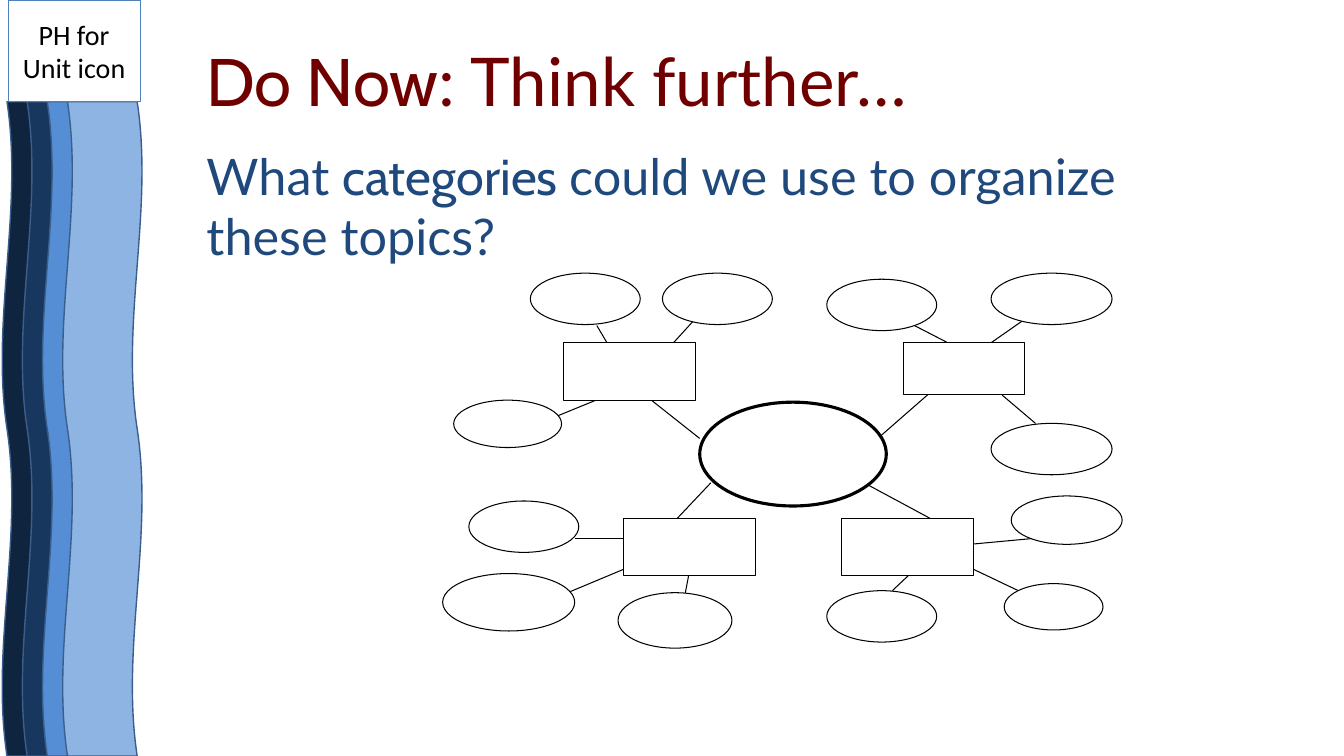
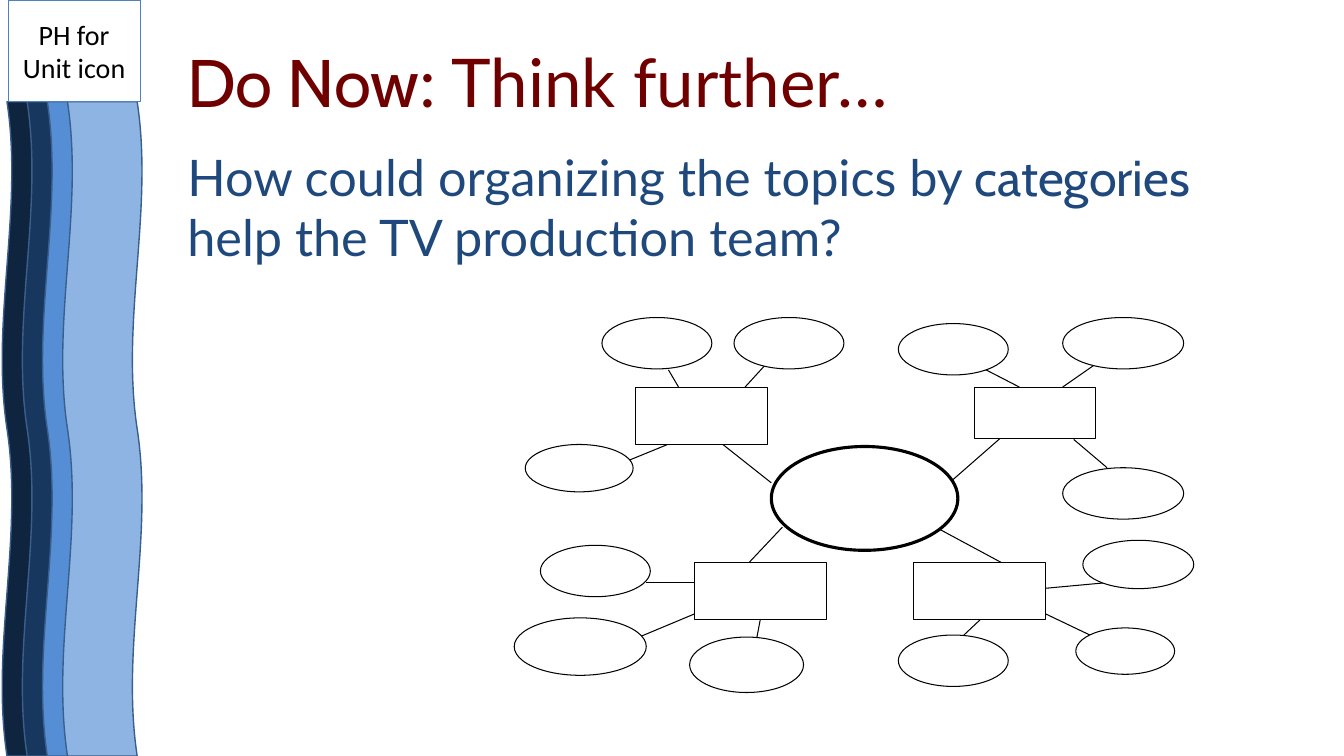
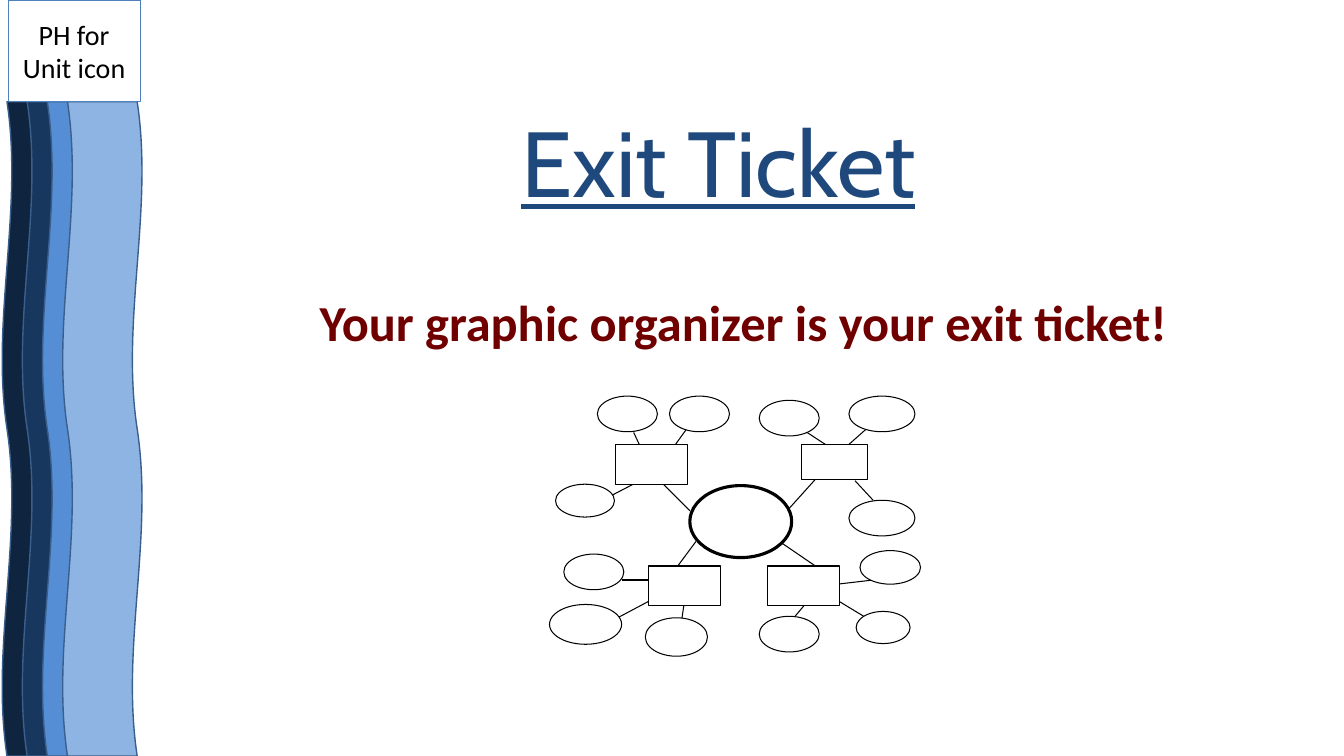
from pptx import Presentation
from pptx.dml.color import RGBColor
from pptx.enum.shapes import MSO_CONNECTOR, MSO_SHAPE
from pptx.enum.text import MSO_ANCHOR, MSO_AUTO_SIZE, PP_ALIGN
from pptx.oxml.ns import qn
from pptx.util import Inches, Pt
from lxml import etree

RECT, OVAL, WAVE = MSO_SHAPE.RECTANGLE, MSO_SHAPE.OVAL, MSO_SHAPE.DOUBLE_WAVE
STRAIGHT = MSO_CONNECTOR.STRAIGHT
MIDDLE = MSO_ANCHOR.MIDDLE
CENTER = PP_ALIGN.CENTER
GROW = MSO_AUTO_SIZE.SHAPE_TO_FIT_TEXT

HEADING, BODY, PLAIN = "Cabin", "Lato", "Calibri"
RED, NAVY, BLACK, WHITE = "700000", "1F497D", "000000", "FFFFFF"
WAVE_FILLS = ["0F243E", "17375E", "558ED5", "8EB4E3"]
WAVE_LINE, ICON_LINE = "3A5F8C", "4F81BD"

# Organizer map, in inches from its top left corner.
MAP_W, MAP_H = 6.74, 3.72
HUB = (2.55, 1.28, 1.85, 1.03)
# Each branch: box, line to the hub, then its topics as (oval, line)
BRANCHES = [
    ((1.2, 0.69, 1.31, 0.57), (2.07, 1.26, 2.55, 1.64), [
        ((0.87, 0, 1.09, 0.51), (1.63, 0.69, 1.53, 0.52)),
        ((2.18, 0, 1.09, 0.51), (2.29, 0.69, 2.5, 0.46)),
        ((0.11, 1.26, 1.07, 0.47), (1.57, 1.24, 1.13, 1.42))]),
    ((4.57, 0.69, 1.2, 0.51), (4.83, 1.19, 4.35, 1.61), [
        ((3.81, 0.06, 1.09, 0.51), (5.01, 0.69, 4.68, 0.52)),
        ((5.44, 0, 1.2, 0.51), (5.44, 0.69, 5.77, 0.46)),
        ((5.44, 1.49, 1.2, 0.51), (5.55, 1.21, 5.88, 1.49))]),
    ((1.79, 2.43, 1.31, 0.57), (2.33, 2.43, 2.66, 2.08), [
        ((0.26, 2.26, 1.09, 0.51), (1.85, 2.63, 1.31, 2.63)),
        ((0, 2.98, 1.31, 0.57), (1.79, 2.94, 1.24, 3.17)),
        ((1.74, 3.17, 1.13, 0.55), (2.44, 3, 2.4, 3.21))]),
    ((3.96, 2.43, 1.31, 0.57), (4.83, 2.43, 4.18, 2.08), [
        ((5.64, 2.21, 1.1, 0.48), (5.23, 2.69, 5.88, 2.63)),
        ((5.57, 3.08, 0.98, 0.46), (5.27, 2.94, 5.71, 3.15)),
        ((3.81, 3.15, 1.09, 0.51), (4.62, 3, 4.46, 3.15))]),
]


def rgb(color):
    return RGBColor.from_string(color)


def add_shape(s, kind, box, fill, line, width):
    sp = s.shapes.add_shape(kind, *map(Inches, box))
    sp.shadow.inherit = False
    if fill:
        sp.fill.solid()
        sp.fill.fore_color.rgb = rgb(fill)
    else:
        sp.fill.background()
    sp.line.color.rgb = rgb(line)
    sp.line.width = Pt(width)
    return sp


def add_line(s, ends):
    cx = s.shapes.add_connector(STRAIGHT, *map(Inches, ends))
    cx.line.color.rgb = rgb(BLACK)
    cx.line.width = Pt(0.75)
    etree.SubElement(cx._element.spPr, qn("a:effectLst"))


def add_text(s, box):
    sp = s.shapes.add_textbox(*map(Inches, box))
    tf = sp.text_frame
    tf.word_wrap = True
    tf.auto_size = GROW
    return tf


def write(p, runs, size, color):
    """Fill a paragraph with (text, font name) runs."""
    p.font.size = Pt(size)
    p.font.color.rgb = rgb(color)
    for text, name in runs:
        r = p.add_run()
        r.text = text
        r.font.name = name


def side_band(s, left, top, width, height):
    """Overlapping upright waves below the unit icon box."""
    icon_h, wave_w, step = 1.01, 0.79, 0.2
    wave_len = height - icon_h
    for i, fill in enumerate(WAVE_FILLS):
        mid_x = left + wave_w / 2 + i * step
        mid_y = top + icon_h + wave_len / 2
        box = (mid_x - wave_len / 2, mid_y - wave_w / 2, wave_len, wave_w)
        add_shape(s, WAVE, box, fill, WAVE_LINE, 1).rotation = 270

    icon_box = (left + 0.06, top, width - 0.08, icon_h)
    sp = add_shape(s, RECT, icon_box, None, ICON_LINE, 0.75)
    tf = sp.text_frame
    tf.word_wrap = True
    tf.vertical_anchor = MIDDLE
    p = tf.paragraphs[0]
    p.alignment = CENTER
    write(p, [("PH for Unit icon", PLAIN)], 20, BLACK)


def organizer(s, left, top, width, height):
    """Empty web of topics, scaled to the given box."""
    kx, ky = width / MAP_W, height / MAP_H

    def place(box):
        x, y, w, h = box
        return left + x * kx, top + y * ky, w * kx, h * ky

    def place_line(ends):
        x1, y1, x2, y2 = ends
        return left + x1 * kx, top + y1 * ky, left + x2 * kx, top + y2 * ky

    # Lines lie behind the shapes
    for _, hub_line, topics in BRANCHES:
        for ends in [hub_line] + [line for _, line in topics]:
            add_line(s, place_line(ends))

    add_shape(s, OVAL, place(HUB), WHITE, BLACK, 2.25)
    for box, _, topics in BRANCHES:
        for oval, _ in topics:
            add_shape(s, OVAL, place(oval), WHITE, BLACK, 0.75)
        add_shape(s, RECT, place(box), WHITE, BLACK, 0.75)


def new_slide(prs):
    s = prs.slides.add_slide(prs.slide_layouts[6])
    side_band(s, 0.02, 0, 1.39, 7.5)
    return s


def do_now_slide(prs, text_box, before, after, map_box):
    """Question slide: heading, question around a key word, organizer."""
    s = new_slide(prs)
    tf = add_text(s, text_box)
    write(tf.paragraphs[0],
          [("Do Now", HEADING), (": Think further…", BODY)], 48, RED)
    p = tf.add_paragraph()
    p.space_before = Pt(18)
    write(p, [(before, BODY), ("categories ", HEADING), (after, BODY)],
          36, NAVY)
    organizer(s, *map_box)


def exit_slide(prs, text_box, map_box):
    s = new_slide(prs)
    tf = add_text(s, text_box)
    p = tf.paragraphs[0]
    p.alignment = CENTER
    p.space_after = Pt(54)
    p.font.underline = True
    write(p, [("Exit Ticket", HEADING)], 66, NAVY)

    p = tf.add_paragraph()
    p.alignment = CENTER
    p.space_after = Pt(12)
    p.font.bold = True
    pPr = p._p.get_or_add_pPr()
    pPr.set("marL", str(Inches(0.5)))
    pPr.set("indent", "0")
    write(p, [("Your graphic organizer is your exit ticket!", PLAIN)], 36, RED)
    organizer(s, *map_box)


def main():
    prs = Presentation()
    prs.slide_width, prs.slide_height = Inches(13.33), Inches(7.5)
    do_now_slide(prs, (1.95, 0.34, 10.03, 2.37),
                 "What ", "could we use to organize these topics?",
                 (4.39, 2.71, MAP_W, MAP_H))
    do_now_slide(prs, (1.76, 0.35, 11.02, 2.37),
                 "How could organizing the topics by ",
                 "help the TV production team?",
                 (5.1, 3.15, MAP_W, MAP_H))
    exit_slide(prs, (1.47, 0.99, 11.31, 2.57), (5.45, 3.93, 3.68, 2.58))
    prs.save("out.pptx")


if __name__ == "__main__":
    main()
